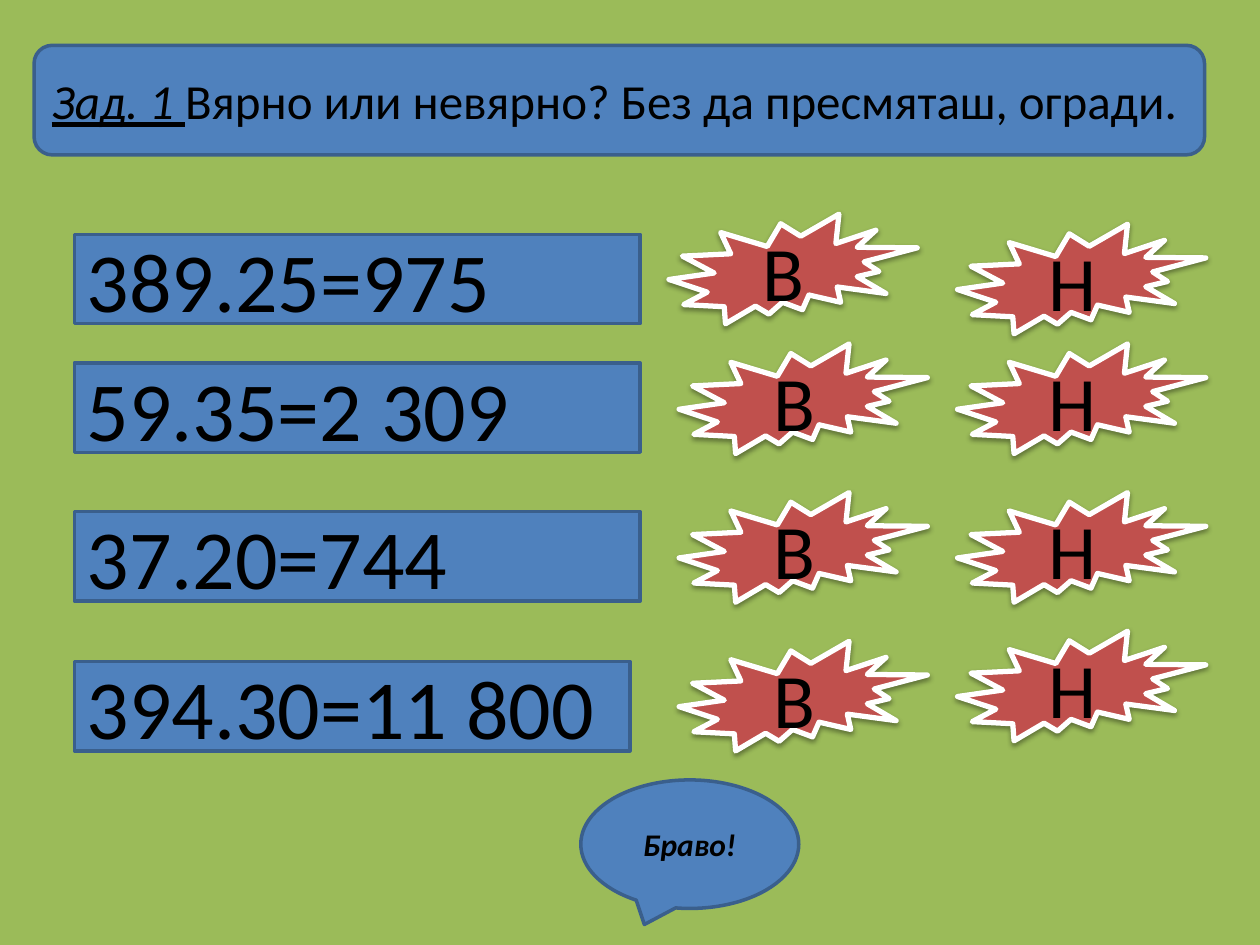
"""Build a true-or-false multiplication quiz slide."""
from dataclasses import dataclass

from lxml import etree
from pptx import Presentation
from pptx.dml.color import RGBColor
from pptx.enum.shapes import MSO_SHAPE
from pptx.enum.text import MSO_ANCHOR, PP_ALIGN
from pptx.oxml.ns import qn
from pptx.util import Inches, Pt

ROUNDED = MSO_SHAPE.ROUNDED_RECTANGLE
RECTANGLE = MSO_SHAPE.RECTANGLE
BURST = MSO_SHAPE.EXPLOSION2
CALLOUT = MSO_SHAPE.OVAL_CALLOUT
LEFT, CENTER = PP_ALIGN.LEFT, PP_ALIGN.CENTER
MIDDLE = MSO_ANCHOR.MIDDLE


@dataclass(frozen=True)
class Theme:
    font: str = "Calibri"
    green: RGBColor = RGBColor(0x9B, 0xBB, 0x59)
    blue: RGBColor = RGBColor(0x4F, 0x81, 0xBD)
    navy: RGBColor = RGBColor(0x3A, 0x5F, 0x8C)
    red: RGBColor = RGBColor(0xC0, 0x50, 0x4D)
    white: RGBColor = RGBColor(0xFF, 0xFF, 0xFF)
    black: RGBColor = RGBColor(0, 0, 0)
    task_size: Pt = Pt(28)
    equation_size: Pt = Pt(48)
    answer_size: Pt = Pt(44)
    praise_size: Pt = Pt(18)


theme = Theme()


def add_panel(kind, box, text, size, align, fill=theme.blue, line=theme.navy, weight=2):
    panel = slide.shapes.add_shape(kind, *map(Inches, box))
    panel.fill.solid()
    panel.fill.fore_color.rgb = fill
    panel.line.color.rgb = line
    panel.line.width = Pt(weight)
    panel.shadow.inherit = False
    panel.text_frame.vertical_anchor = MIDDLE
    paragraph = panel.text_frame.paragraphs[0]
    paragraph.text = text
    paragraph.alignment = align
    paragraph.font.name = theme.font
    paragraph.font.size = size
    paragraph.font.color.rgb = theme.black
    return panel


def add_drop_shadow(panel):
    effects = panel._element.spPr.find(qn("a:effectLst"))
    shadow = etree.SubElement(
        effects, qn("a:outerShdw"), blurRad=str(Pt(3.1)), dist=str(Pt(1.6)),
        dir="5400000", rotWithShape="0")
    color = etree.SubElement(shadow, qn("a:srgbClr"), val=str(theme.black))
    etree.SubElement(color, qn("a:alpha"), val="38000")


presentation = Presentation()
presentation.slide_width = Inches(10)
presentation.slide_height = Inches(7.5)
slide = presentation.slides.add_slide(presentation.slide_layouts[6])
slide.background.fill.solid()
slide.background.fill.fore_color.rgb = theme.green

task = add_panel(ROUNDED, (0.27, 0.36, 9.29, 0.87), "Зад. 1 ", theme.task_size, LEFT)
task_paragraph = task.text_frame.paragraphs[0]
task_number = task_paragraph.runs[0]
task_number.font.italic = True
task_number.font.underline = True
task_paragraph.add_run().text = "Вярно или невярно? Без да пресмяташ, огради."

questions = [
    ("389.25=975", 1.86, 4.49, (5.31, 1.7), (7.6, 1.78)),
    ("59.35=2 309", 2.88, 4.49, (5.39, 2.73), (7.6, 2.73)),
    ("37.20=744", 4.06, 4.49, (5.39, 3.91), (7.6, 3.91)),
    ("394.30=11 800", 5.25, 4.41, (5.39, 5.09), (7.6, 5.01)),
]
for equation, top, width, true_corner, false_corner in questions:
    add_panel(RECTANGLE, (0.59, top, width, 0.71), equation, theme.equation_size, LEFT)
    for letter, corner in (("В", true_corner), ("Н", false_corner)):
        answer = add_panel(BURST, (*corner, 1.97, 0.87), letter, theme.answer_size,
                           CENTER, theme.red, theme.white, 3)
        add_drop_shadow(answer)

praise = add_panel(CALLOUT, (4.61, 6.19, 1.73, 1.02), "Браво!", theme.praise_size, CENTER)
praise_font = praise.text_frame.paragraphs[0].font
praise_font.bold = True
praise_font.italic = True

presentation.save("out.pptx")
